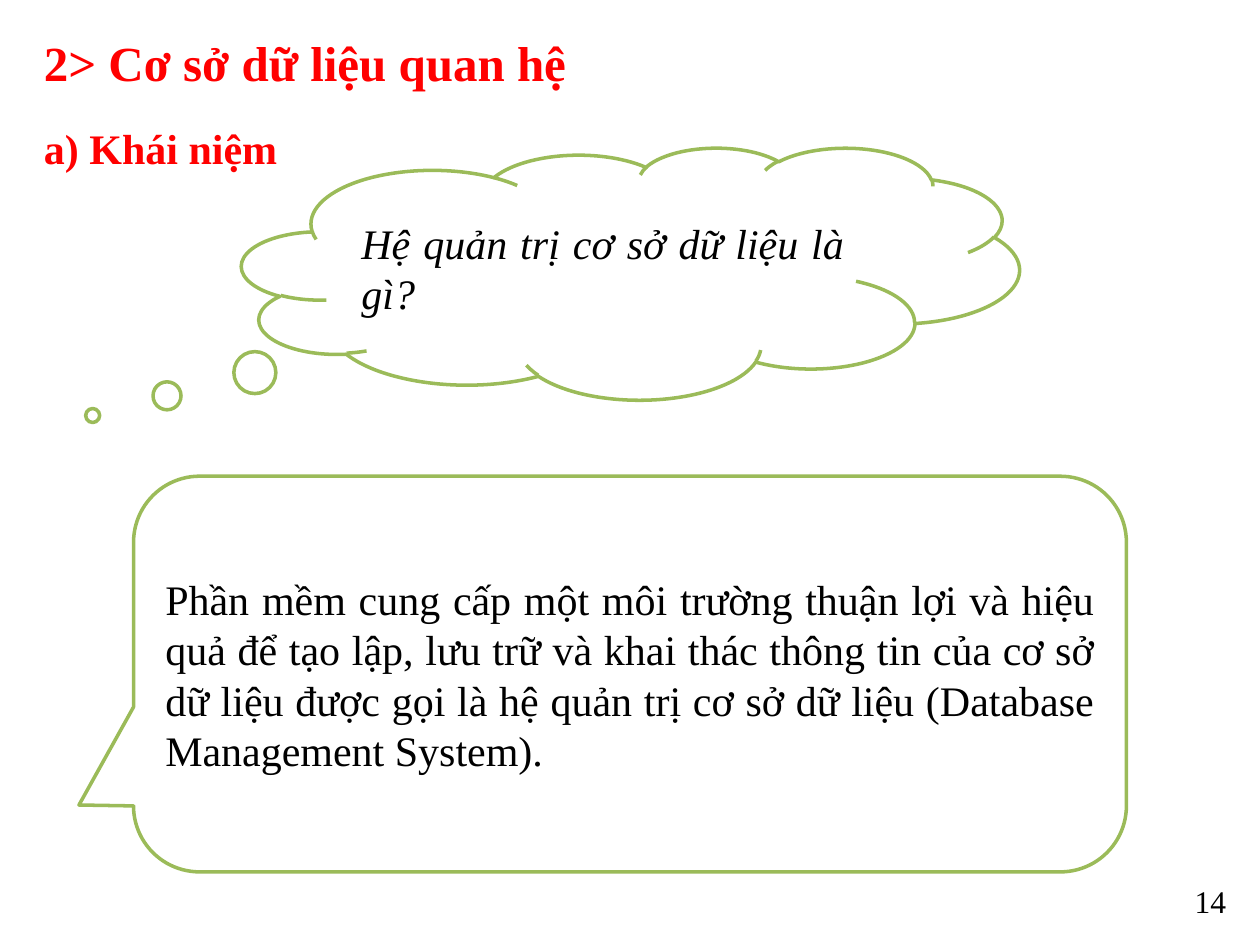
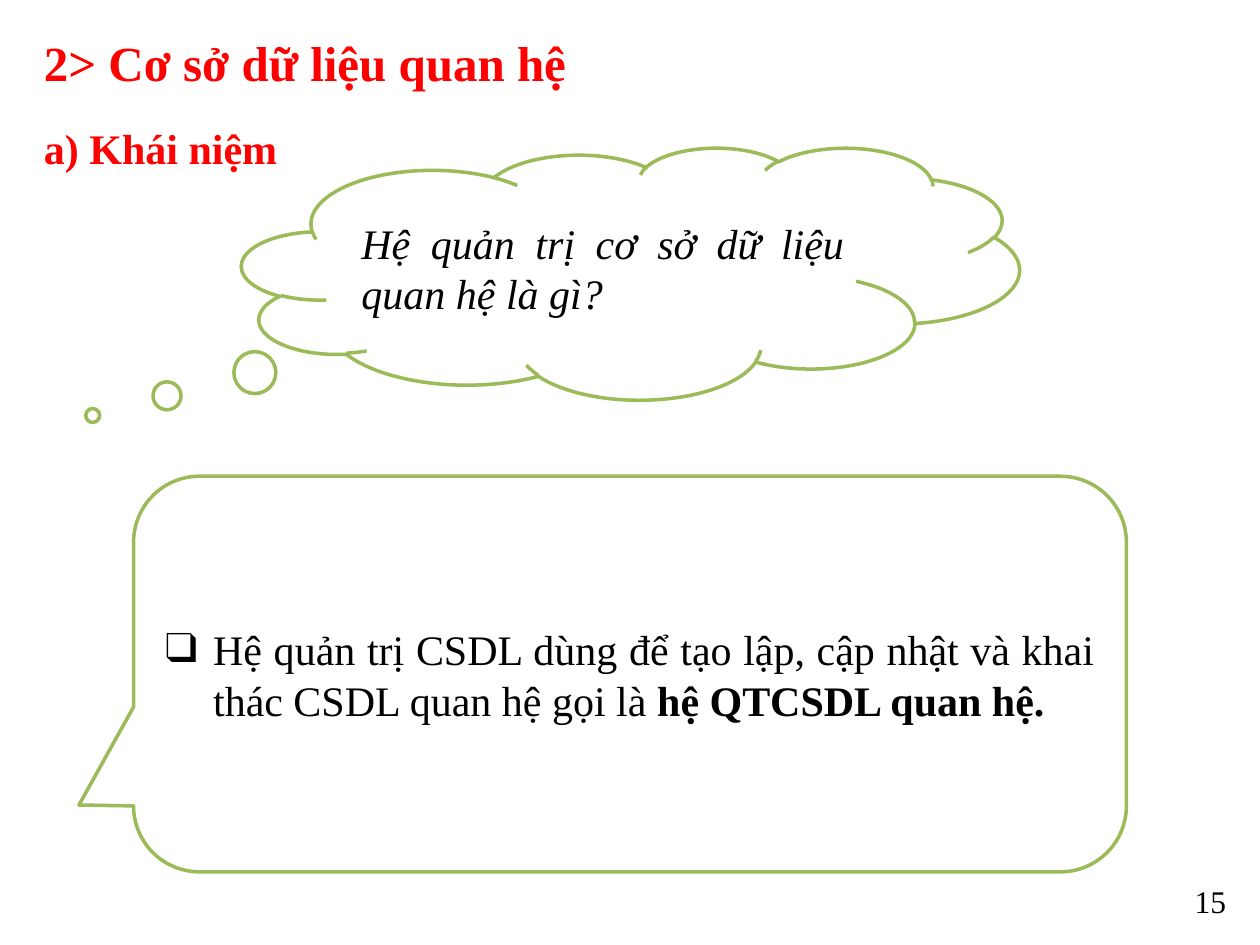
"""Builds two slides on relational database management systems."""
from dataclasses import dataclass

from lxml import etree
from pptx import Presentation
from pptx.dml.color import RGBColor
from pptx.enum.shapes import MSO_SHAPE
from pptx.enum.text import MSO_ANCHOR, PP_ALIGN
from pptx.oxml.ns import qn
from pptx.util import Inches, Pt

CLOUD = MSO_SHAPE.CLOUD_CALLOUT
BALLOON = MSO_SHAPE.ROUNDED_RECTANGULAR_CALLOUT
MIDDLE, TOP = MSO_ANCHOR.MIDDLE, MSO_ANCHOR.TOP
LEFT, RIGHT, JUSTIFY = PP_ALIGN.LEFT, PP_ALIGN.RIGHT, PP_ALIGN.JUSTIFY
BLANK_LAYOUT = 6


@dataclass(frozen=True)
class Theme:
    """Colours, font and type sizes shared by the slides."""
    font: str = "Times New Roman"
    heading: RGBColor = RGBColor(0xFF, 0x00, 0x00)
    ink: RGBColor = RGBColor(0x00, 0x00, 0x00)
    paper: RGBColor = RGBColor(0xFF, 0xFF, 0xFF)
    outline: RGBColor = RGBColor(0x9B, 0xBB, 0x59)
    outline_width: Pt = Pt(2)
    title_size: Pt = Pt(28)
    body_size: Pt = Pt(24)
    number_size: Pt = Pt(18)


THEME = Theme()
TITLE = "2> Cơ sở dữ liệu quan hệ"
SUBTITLE = "a) Khái niệm"
BULLET = "❑"
BULLET_INDENT = Inches(0.38)

PAGES = [
    {
        "number": 14,
        "question": "Hệ quản trị cơ sở dữ liệu là gì?",
        "answer": "Phần mềm cung cấp một môi trường thuận lợi và hiệu quả để tạo lập, "
                  "lưu trữ và khai thác thông tin của cơ sở dữ liệu được gọi là "
                  "hệ quản trị cơ sở dữ liệu (Database Management System).",
    },
    {
        "number": 15,
        "question": "Hệ quản trị cơ sở dữ liệu quan hệ là gì?",
        "answer": "Hệ quản trị CSDL dùng để tạo lập, cập nhật và khai thác "
                  "CSDL quan hệ gọi là ",
        "key_term": "hệ QTCSDL quan hệ.",
        "bulleted": True,
    },
]


def style_span(span, size, color, bold=False, italic=False):
    """Apply the theme font and the given look to a run."""
    span.font.name = THEME.font
    span.font.size = size
    span.font.color.rgb = color
    span.font.bold = bold
    span.font.italic = italic


def write_text(box, text, size, color, align, anchor, bold=False, italic=False):
    """Fill a shape with one styled paragraph and return it."""
    frame = box.text_frame
    frame.word_wrap = True
    frame.vertical_anchor = anchor
    frame.text = text
    para = frame.paragraphs[0]
    para.alignment = align
    style_span(para.runs[0], size, color, bold, italic)
    return para


def add_label(page, area, text, size, color, align=LEFT, anchor=TOP, bold=False):
    """Add a text box holding one line."""
    box = page.shapes.add_textbox(*map(Inches, area))
    write_text(box, text, size, color, align, anchor, bold)


def add_callout(page, kind, area, adjustments, text, italic=False):
    """Add an outlined callout and return its paragraph."""
    callout = page.shapes.add_shape(kind, *map(Inches, area))
    for index, value in enumerate(adjustments):
        callout.adjustments[index] = value
    callout.shadow.inherit = False
    callout.fill.solid()
    callout.fill.fore_color.rgb = THEME.paper
    callout.line.color.rgb = THEME.outline
    callout.line.width = THEME.outline_width
    return write_text(callout, text, THEME.body_size, THEME.ink,
                      JUSTIFY, MIDDLE, italic=italic)


def add_bullet(para):
    """Give a paragraph a hanging box bullet."""
    properties = para._p.get_or_add_pPr()
    properties.set("marL", str(BULLET_INDENT))
    properties.set("indent", str(-BULLET_INDENT))
    etree.SubElement(properties, qn("a:buFont")).set("typeface", THEME.font)
    etree.SubElement(properties, qn("a:buChar")).set("char", BULLET)


def add_page(deck, number, question, answer, key_term="", bulleted=False):
    """Add a slide with a question cloud and an answer balloon."""
    page = deck.slides.add_slide(deck.slide_layouts[BLANK_LAYOUT])
    add_label(page, (0.25, 0.12, 8.67, 0.75), TITLE, THEME.title_size,
              THEME.heading, JUSTIFY, MIDDLE, bold=True)
    add_label(page, (7.5, 6.95, 2.33, 0.4), str(number), THEME.number_size,
              THEME.ink, RIGHT)
    add_callout(page, CLOUD, (1.92, 1.17, 6.17, 2), (-0.692, 0.564),
                question, italic=True)
    para = add_callout(page, BALLOON, (1.06, 3.78, 7.88, 3.14),
                       (-0.555, 0.331, 0.167), answer)
    if bulleted:
        add_bullet(para)
    if key_term:
        span = para.add_run()
        span.text = key_term
        style_span(span, THEME.body_size, THEME.ink, bold=True)
    add_label(page, (0.25, 0.92, 3.58, 0.5), SUBTITLE, THEME.body_size,
              THEME.heading, bold=True)


def main():
    """Build and save the deck."""
    deck = Presentation()
    deck.slide_width, deck.slide_height = Inches(10), Inches(7.5)
    for content in PAGES:
        add_page(deck, **content)
    deck.save("out.pptx")


if __name__ == "__main__":
    main()
